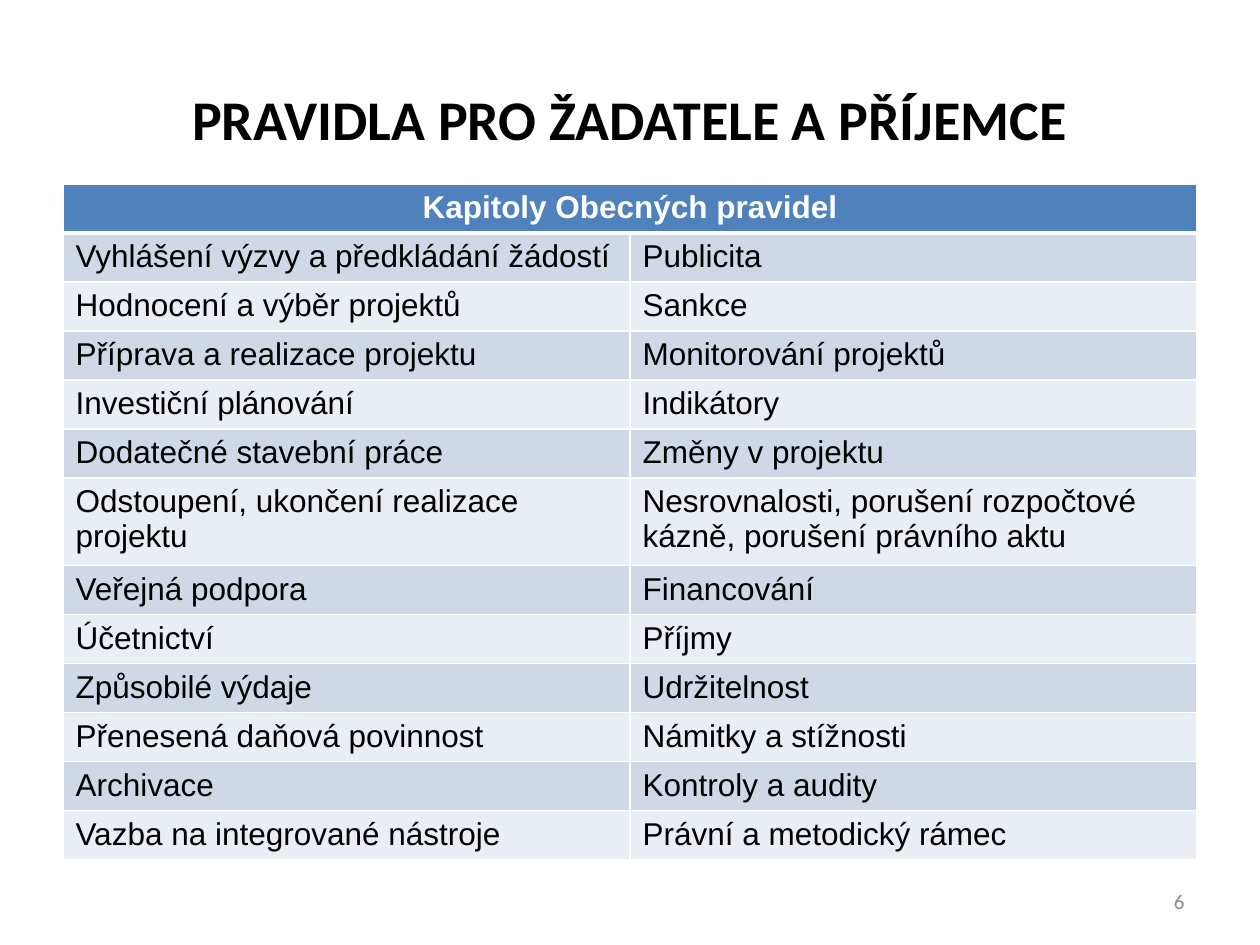
"""Build the slide listing the chapters of the general rules."""
from lxml import etree
from pptx import Presentation
from pptx.dml.color import RGBColor
from pptx.enum.text import MSO_ANCHOR as Anchor, PP_ALIGN as Align
from pptx.oxml.ns import qn
from pptx.util import Pt

PX = 914400 / 126


def write(frame, text, size=18, font="Arial", color="000000", bold=False,
          align=Align.LEFT, anchor=Anchor.TOP):
    frame.text = text
    frame.word_wrap = True
    frame.vertical_anchor = anchor
    paragraph = frame.paragraphs[0]
    paragraph.alignment = align
    run_font = paragraph.runs[0].font
    run_font.size, run_font.name, run_font.bold = Pt(size), font, bold
    run_font.color.rgb = RGBColor.from_string(color)


def format_cell(cell, fill, top=1, bottom=1):
    cell.fill.solid()
    cell.fill.fore_color.rgb = RGBColor.from_string(fill)
    properties = cell._tc.get_or_add_tcPr()
    borders = [("a:lnL", 1), ("a:lnR", 1), ("a:lnT", top), ("a:lnB", bottom)]
    for position, (tag, width) in enumerate(borders):
        line = etree.Element(qn(tag), w=str(Pt(width)))
        line_fill = etree.SubElement(line, qn("a:solidFill"))
        etree.SubElement(line_fill, qn("a:srgbClr"), val="FFFFFF")
        properties.insert(position, line)


presentation = Presentation()
presentation.slide_width = round(1260 * PX)
presentation.slide_height = round(945 * PX)
slide = presentation.slides.add_slide(presentation.slide_layouts[5])

title = slide.shapes.title
title.left, title.top, title.width, title.height = [
    round(length * PX) for length in (63, 39, 1134, 158)]
write(title.text_frame, "PRAVIDLA PRO ŽADATELE A PŘÍJEMCE", size=32,
      font="Calibri", bold=True, align=Align.CENTER, anchor=Anchor.MIDDLE)

chapters = [
    ("Vyhlášení výzvy a předkládání žádostí", "Publicita"),
    ("Hodnocení a výběr projektů", "Sankce"),
    ("Příprava a realizace projektu", "Monitorování projektů"),
    ("Investiční plánování", "Indikátory"),
    ("Dodatečné stavební práce", "Změny v projektu"),
    ("Odstoupení, ukončení realizace projektu",
     "Nesrovnalosti, porušení rozpočtové kázně, porušení právního aktu"),
    ("Veřejná podpora", "Financování"),
    ("Účetnictví", "Příjmy"),
    ("Způsobilé výdaje", "Udržitelnost"),
    ("Přenesená daňová povinnost", "Námitky a stížnosti"),
    ("Archivace", "Kontroly a audity"),
    ("Vazba na integrované nástroje", "Právní a metodický rámec"),
]
table = slide.shapes.add_table(
    len(chapters) + 1, 2, *[round(length * PX) for length in (63, 184, 1134, 676)]).table
for row in table.rows:
    row.height = round(49 * PX)
table.rows[6].height = round(88 * PX)

header = table.cell(0, 0)
header.merge(table.cell(0, 1))
write(header.text_frame, "Kapitoly Obecných pravidel", color="FFFFFF",
      bold=True, align=Align.CENTER)
for column in range(2):
    format_cell(table.cell(0, column), "4F81BD", bottom=3)

for row_number, names in enumerate(chapters, start=1):
    for column, name in enumerate(names):
        cell = table.cell(row_number, column)
        write(cell.text_frame, name)
        format_cell(cell, "D0D8E8" if row_number % 2 else "E9EDF4",
                    top=3 if row_number == 1 else 1)

page_number = slide.shapes.add_textbox(
    *[round(length * PX) for length in (903, 876, 294, 50)])
write(page_number.text_frame, "6", size=12, font="Calibri", color="8C8C8C",
      align=Align.RIGHT, anchor=Anchor.MIDDLE)

presentation.save("out.pptx")
